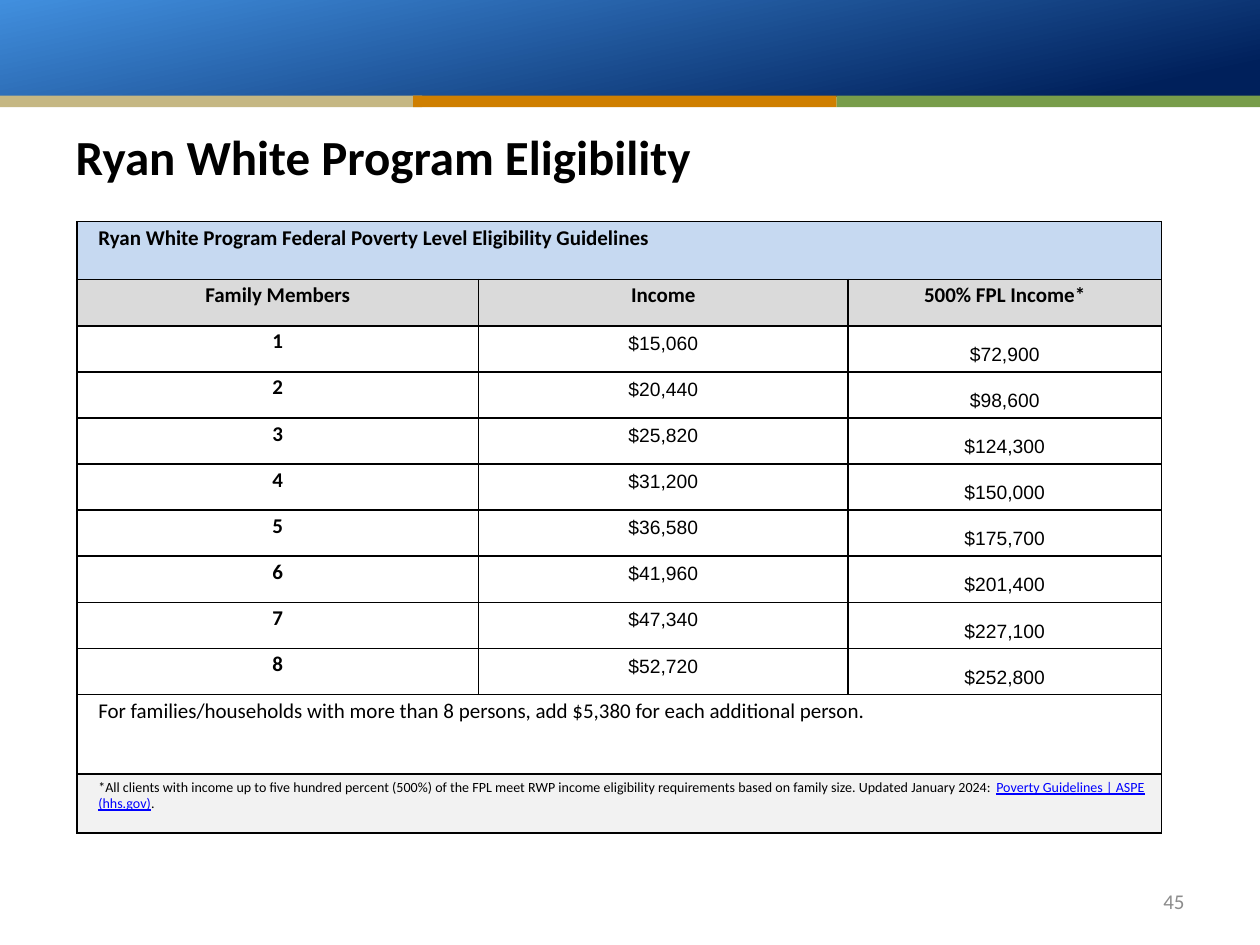
from lxml.etree import SubElement
from pptx import Presentation
from pptx.dml.color import RGBColor
from pptx.enum.shapes import MSO_SHAPE
from pptx.enum.text import MSO_ANCHOR as ANCHOR, PP_ALIGN as ALIGN
from pptx.oxml.ns import qn
from pptx.util import Inches, Pt

BLACK = RGBColor(0x00, 0x00, 0x00)
GREY = RGBColor(0x8C, 0x8C, 0x8C)
NAVY = RGBColor(0x00, 0x20, 0x5B)
SKY = RGBColor(0x41, 0x8F, 0xDE)
SAND = RGBColor(0xC5, 0xB7, 0x83)
ORANGE = RGBColor(0xCF, 0x7F, 0x00)
GREEN = RGBColor(0x78, 0x9D, 0x4A)
PALE_BLUE = RGBColor(0xC6, 0xD9, 0xF1)
MID_GREY = RGBColor(0xDA, 0xDA, 0xDA)
PALE_GREY = RGBColor(0xF2, 0xF2, 0xF2)
LINK = RGBColor(0x00, 0x00, 0xFF)


def add_run(p, text, size, bold=False, color=BLACK, font="Calibri"):
    r = p.add_run()
    r.text = text
    r.font.name = font
    r.font.size = Pt(size)
    r.font.bold = bold
    r.font.color.rgb = color
    return r


def style_cell(cell, fill=None, leading=12.8, align=ALIGN.CENTER, indent=0):
    tcPr = cell._tc.get_or_add_tcPr()
    for side in ("lnL", "lnR", "lnT", "lnB"):
        ln = SubElement(tcPr, qn(f"a:{side}"), w=str(Pt(1)))
        color = SubElement(SubElement(ln, qn("a:solidFill")), qn("a:srgbClr"))
        color.set("val", str(BLACK))
    if fill is None:
        cell.fill.background()
    else:
        cell.fill.solid()
        cell.fill.fore_color.rgb = fill
    p = cell.text_frame.paragraphs[0]
    p.alignment = align
    p.line_spacing = Pt(leading)
    if indent:
        p._p.get_or_add_pPr().set("marL", str(Inches(indent)))
    return p


prs = Presentation()
prs.slide_width, prs.slide_height = Inches(10), Inches(7.5)
s = prs.slides.add_slide(prs.slide_layouts[5])

banner = s.shapes.add_shape(MSO_SHAPE.RECTANGLE, 0, 0, prs.slide_width, Inches(0.77))
banner.shadow.inherit = False
banner.line.fill.background()
banner.fill.gradient()
banner.fill.gradient_angle = 102
for stop, color, position in zip(banner.fill.gradient_stops, (NAVY, SKY), (0.09, 1)):
    stop.color.rgb = color
    stop.position = position

for left, color in ((-0.01, SAND), (3.28, ORANGE), (6.64, GREEN)):
    sp = s.shapes.add_shape(
        MSO_SHAPE.RECTANGLE, Inches(left), Inches(0.76), Inches(3.36), Inches(0.09))
    sp.shadow.inherit = False
    sp.line.fill.background()
    sp.fill.solid()
    sp.fill.fore_color.rgb = color

title = s.shapes.title
title.left, title.top = Inches(0.5), Inches(0.89)
title.width, title.height = Inches(9), Inches(0.69)
tf = title.text_frame
tf.vertical_anchor = ANCHOR.MIDDLE
p = tf.paragraphs[0]
p.alignment = ALIGN.LEFT
add_run(p, "Ryan White Program Eligibility", 28, True)

incomes = [
    ("$15,060", "$72,900"), ("$20,440", "$98,600"),
    ("$25,820", "$124,300"), ("$31,200", "$150,000"),
    ("$36,580", "$175,700"), ("$41,960", "$201,400"),
    ("$47,340", "$227,100"), ("$52,720", "$252,800"),
]
widths = [3.19, 2.93, 2.49]
heights = [0.46] + [0.366] * (len(incomes) + 1) + [0.63, 0.47]
table = s.shapes.add_table(
    len(heights), len(widths), Inches(0.61), Inches(1.76),
    Inches(sum(widths)), Inches(sum(heights))).table
table.first_row = table.horz_banding = False
for column, width in zip(table.columns, widths):
    column.width = Inches(width)
for row, height in zip(table.rows, heights):
    row.height = Inches(height)

note_row = len(heights) - 1
extra_row = note_row - 1
wide = {}
for row, fill, leading in ((0, PALE_BLUE, 13.5), (extra_row, None, 13.5), (note_row, PALE_GREY, 9.2)):
    table.cell(row, 0).merge(table.cell(row, 2))
    for col in (2, 1, 0):
        wide[row] = style_cell(table.cell(row, col), fill, leading, ALIGN.LEFT, 0.07)

add_run(wide[0], "Ryan White Program Federal Poverty Level Eligibility Guidelines", 12, True)
add_run(wide[extra_row], "For families/households with more than 8 persons, "
        "add $5,380 for each additional person.", 12)
add_run(wide[note_row], "*All clients with income up to five hundred percent (500%) of the FPL meet RWP "
        "income eligibility requirements based on family size. Updated January 2024: ", 8)
add_run(wide[note_row], "Poverty Guidelines | ASPE (hhs.gov)", 8, color=LINK).font.underline = True
add_run(wide[note_row], ".", 8)

for col, heading in enumerate(("Family Members", "Income", "500% FPL Income*")):
    add_run(style_cell(table.cell(1, col), MID_GREY), heading, 12, True)

for members, (income, limit) in enumerate(incomes, 1):
    row = members + 1
    add_run(style_cell(table.cell(row, 0)), str(members), 12, True)
    add_run(style_cell(table.cell(row, 1)), income, 11, font="Arial")
    add_run(style_cell(table.cell(row, 2)), limit, 11, font="Arial")
    table.cell(row, 2).vertical_anchor = ANCHOR.BOTTOM

number = s.shapes.add_textbox(Inches(8.92), Inches(6.95), Inches(0.58), Inches(0.4))
tf = number.text_frame
tf.word_wrap = True
tf.vertical_anchor = ANCHOR.MIDDLE
p = tf.paragraphs[0]
p.alignment = ALIGN.RIGHT
add_run(p, "45", 12, color=GREY)

prs.save("out.pptx")
